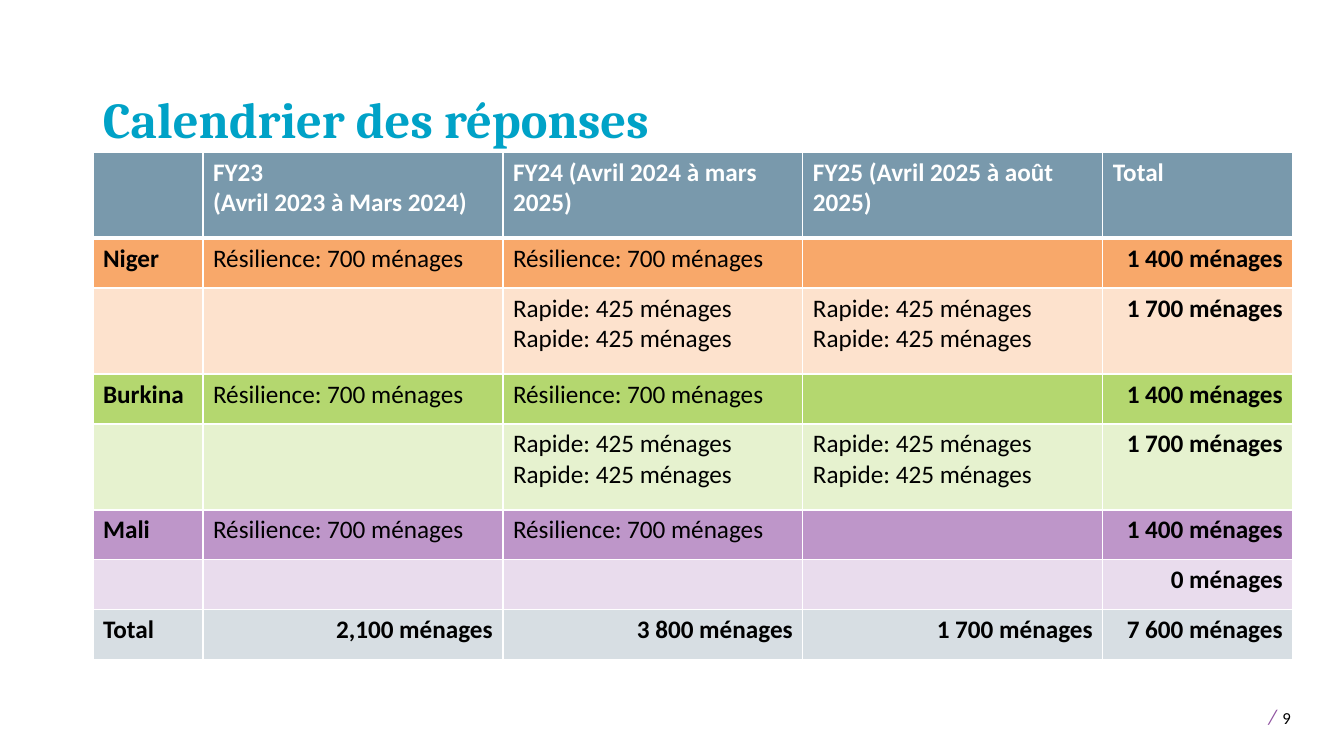
from pptx import Presentation
from pptx.dml.color import RGBColor
from pptx.enum.text import MSO_ANCHOR, PP_ALIGN
from pptx.oxml import parse_xml
from pptx.oxml.ns import nsdecls
from pptx.util import Pt

PX = 914400 / 100.8
COLORS = {
    "white": "FFFFFF", "black": "000000", "title": "00A2C7", "slash": "9053A1",
    "head": "7999AC", "niger": "F8A86A", "niger light": "FDE2CD",
    "burkina": "B4D76F", "burkina light": "E6F2CF",
    "mali": "BE96C9", "mali light": "E9DCED", "total": "D7DEE3",
}


def px(*sizes):
    return [round(size * PX) for size in sizes]


def write(par, text, size=18, color="black", font="Calibri", bold=False, italic=False):
    run = par.add_run()
    run.text = text
    run.font.size = Pt(size)
    run.font.name = font
    run.font.bold = bold
    run.font.italic = italic
    run.font.color.rgb = RGBColor.from_string(COLORS[color])


deck = Presentation()
deck.slide_width, deck.slide_height = px(1344, 756)
slide = deck.slides.add_slide(deck.slide_layouts[6])

title = slide.shapes.add_textbox(*px(93, 40, 1159, 114)).text_frame
title.word_wrap = True
title.vertical_anchor = MSO_ANCHOR.BOTTOM
title.paragraphs[0].line_spacing = 0.9
write(title.paragraphs[0], "Calendrier des réponses", size=36, color="title", font="Cambria", bold=True)

steady = "Résilience: 700 ménages"
rapid = "Rapide: 425 ménages\nRapide: 425 ménages"
rows = [
    ("head", 86, ["", "FY23\n(Avril 2023 à Mars 2024)", "FY24 (Avril 2024 à mars 2025)",
                  "FY25 (Avril 2025 à août 2025)", "Total"]),
    ("niger", 50, ["Niger", steady, steady, "", "1 400 ménages"]),
    ("niger light", 86, ["", "", rapid, rapid, "1 700 ménages"]),
    ("burkina", 50, ["Burkina", steady, steady, "", "1 400 ménages"]),
    ("burkina light", 86, ["", "", rapid, rapid, "1 700 ménages"]),
    ("mali", 50, ["Mali", steady, steady, "", "1 400 ménages"]),
    ("mali light", 50, ["", "", "", "", "0 ménages"]),
    ("total", 50, ["Total", "2,100 ménages", "3 800 ménages", "1 700 ménages", "7 600 ménages"]),
]
widths = px(110, 300, 300, 300, 190)
table = slide.shapes.add_table(len(rows), len(widths), *px(93, 152, 1200, 508)).table
for column, width in zip(table.columns, widths):
    column.width = width

for r, (fill, height, texts) in enumerate(rows):
    table.rows[r].height = px(height)[0]
    for c, text in enumerate(texts):
        cell = table.cell(r, c)
        props = cell._tc.get_or_add_tcPr()
        for side in "LRTB":
            thick = (r, side) in [(0, "B"), (1, "T")]
            props.append(parse_xml(
                f'<a:ln{side} {nsdecls("a")} w="{Pt(3 if thick else 1)}"><a:solidFill>'
                f'<a:srgbClr val="{COLORS["white"]}"/></a:solidFill></a:ln{side}>'))
        cell.fill.solid()
        cell.fill.fore_color.rgb = RGBColor.from_string(COLORS[fill])
        right = r > 0 and (c == 4 or fill == "total" and c > 0)
        for i, line in enumerate(text.split("\n")):
            frame = cell.text_frame
            par = frame.add_paragraph() if i else frame.paragraphs[0]
            par.alignment = PP_ALIGN.RIGHT if right else PP_ALIGN.LEFT
            if line:
                write(par, line, color="white" if r == 0 else "black",
                      bold=r == 0 or c == 0 or right)
            else:
                par.font.size = Pt(18)

page = slide.shapes.add_textbox(*px(1253, 694, 88, 40)).text_frame
page.word_wrap = True
par = page.paragraphs[0]
write(par, " ")
write(par, "/", size=15, color="slash", italic=True)
write(par, " ")
write(par, "9", size=12)

deck.save("out.pptx")
